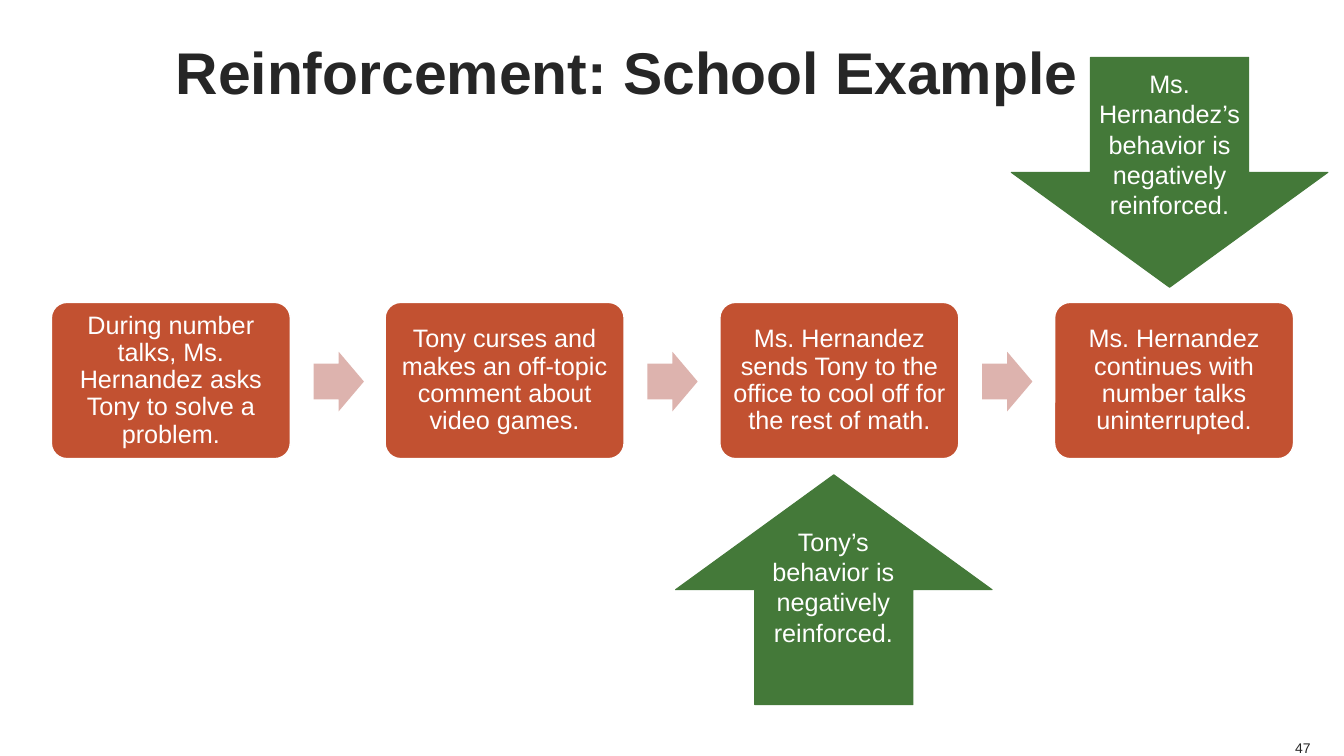
from dataclasses import dataclass

from pptx import Presentation
from pptx.dml.color import RGBColor
from pptx.enum.shapes import MSO_SHAPE
from pptx.enum.text import MSO_ANCHOR, MSO_AUTO_SIZE, PP_ALIGN
from pptx.shapes.autoshape import Shape
from pptx.slide import Slide
from pptx.util import Emu, Pt

EMU_PER_PX = 9144  # 100 px to the inch


@dataclass(frozen=True)
class Theme:
    font: str = "Arial"
    dark: str = "262626"
    white: str = "FFFFFF"
    card: str = "C25131"
    step_arrow: str = "DDB3AE"
    callout: str = "447939"
    title_size: int = 42
    text_size: int = 18
    number_size: int = 10


@dataclass(frozen=True)
class Box:
    left: int
    top: int
    width: int
    height: int

    def emu(self) -> tuple[Emu, Emu, Emu, Emu]:
        return px(self.left), px(self.top), px(self.width), px(self.height)


@dataclass(frozen=True)
class Callout:
    text: str
    arrow: Box
    rotation: int
    label: Box


THEME = Theme()
STEPS = (
    "During number talks, Ms. Hernandez asks Tony to solve a problem.",
    "Tony curses and makes an off-topic comment about video games.",
    "Ms. Hernandez sends Tony to the office to cool off for the rest of math.",
    "Ms. Hernandez continues with number talks uninterrupted.",
)
CALLOUTS = (
    Callout("Tony’s behavior is negatively reinforced.",
            Box(713, 428, 228, 314), 270, Box(752, 517, 149, 131)),
    Callout("Ms. Hernandez’s behavior is negatively reinforced.",
            Box(1046, 14, 228, 314), 90, Box(1078, 63, 164, 162)),
)
FIRST_LEFT, LAST_LEFT = 51, 1046
ARROW_OFFSET = 260


def px(value: int) -> Emu:
    return Emu(value * EMU_PER_PX)


def write(shape: Shape, text: str, size: int, color: str, bold: bool = False,
          align: PP_ALIGN = PP_ALIGN.CENTER, anchor: MSO_ANCHOR = MSO_ANCHOR.MIDDLE,
          inset: tuple[int, int] = (0, 0), wrap: bool = True) -> None:
    frame = shape.text_frame
    frame.text = text
    frame.word_wrap = wrap
    frame.auto_size = MSO_AUTO_SIZE.NONE
    frame.vertical_anchor = anchor
    frame.margin_left = frame.margin_right = px(inset[0])
    frame.margin_top = frame.margin_bottom = px(inset[1])
    paragraph = frame.paragraphs[0]
    paragraph.alignment = align
    font = paragraph.runs[0].font
    font.name, font.size, font.bold = THEME.font, Pt(size), bold
    font.color.rgb = RGBColor.from_string(color)


def add_filled(slide: Slide, kind: MSO_SHAPE, box: Box, fill: str,
               line: str | None = None, line_width: float = 1) -> Shape:
    shape = slide.shapes.add_shape(kind, *box.emu())
    shape.shadow.inherit = False
    shape.fill.solid()
    shape.fill.fore_color.rgb = RGBColor.from_string(fill)
    if line:
        shape.line.color.rgb = RGBColor.from_string(line)
        shape.line.width = Pt(line_width)
    else:
        shape.line.fill.background()
    return shape


def add_step(slide: Slide, index: int, text: str) -> None:
    gaps = len(STEPS) - 1
    left = FIRST_LEFT + index * (LAST_LEFT - FIRST_LEFT) // gaps
    card = add_filled(slide, MSO_SHAPE.ROUNDED_RECTANGLE, Box(left, 300, 237, 155),
                      THEME.card, THEME.white)
    card.adjustments[0] = 0.1
    write(card, text, THEME.text_size, THEME.white, inset=(7, 7))
    card.text_frame.paragraphs[0].line_spacing = 0.9
    if index < gaps:
        arrow = add_filled(slide, MSO_SHAPE.RIGHT_ARROW,
                           Box(left + ARROW_OFFSET, 349, 50, 59), THEME.step_arrow)
        arrow.adjustments[0] = 0.6


def add_callout(slide: Slide, callout: Callout) -> None:
    arrow = add_filled(slide, MSO_SHAPE.RIGHT_ARROW, callout.arrow,
                       THEME.callout, THEME.callout, 0.75)
    arrow.rotation = callout.rotation
    label = slide.shapes.add_textbox(*callout.label.emu())
    write(label, callout.text, THEME.text_size, THEME.white,
          anchor=MSO_ANCHOR.TOP, inset=(10, 5))


def main() -> None:
    presentation = Presentation()
    presentation.slide_width, presentation.slide_height = px(1333), px(750)
    slide = presentation.slides.add_slide(presentation.slide_layouts[5])

    # Title
    title = slide.shapes.title
    title.left, title.top, title.width, title.height = Box(50, 0, 1143, 140).emu()
    write(title, "Reinforcement: School Example", THEME.title_size, THEME.dark, bold=True)

    # Chain of events
    for index, text in enumerate(STEPS):
        add_step(slide, index, text)

    # Reinforcement callouts
    for callout in CALLOUTS:
        add_callout(slide, callout)

    # Slide number
    number = slide.shapes.add_textbox(*Box(1285, 733, 15, 17).emu())
    write(number, "47", THEME.number_size, THEME.dark, align=PP_ALIGN.RIGHT,
          anchor=MSO_ANCHOR.BOTTOM, wrap=False)

    presentation.save("out.pptx")


if __name__ == "__main__":
    main()
